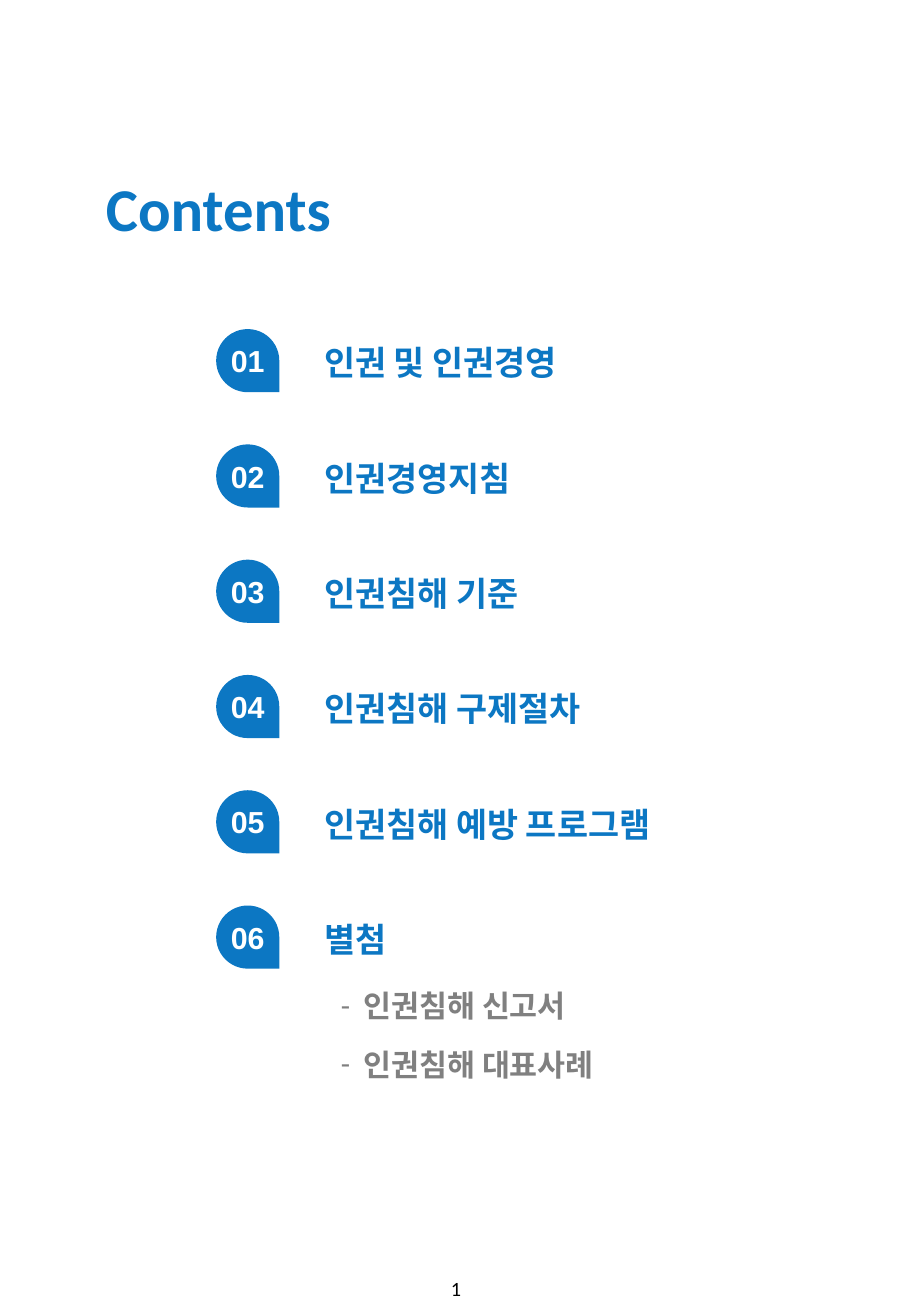
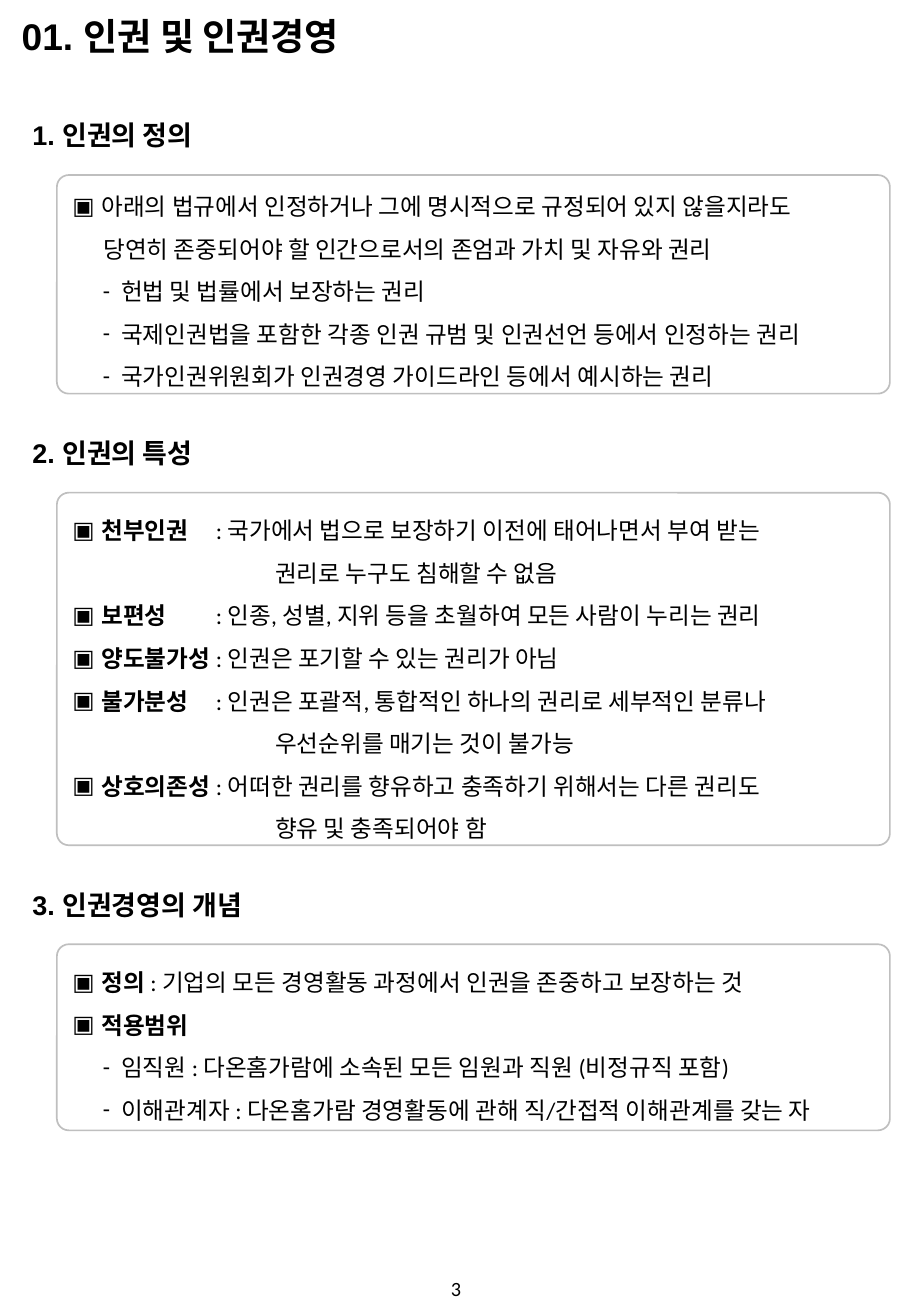
import pptx
import pptx.dml.color
import pptx.enum.shapes
import pptx.enum.text
import pptx.oxml.ns
import pptx.util
from lxml import etree

Cm = pptx.util.Cm
Pt = pptx.util.Pt
RGBColor = pptx.dml.color.RGBColor
ALIGN = pptx.enum.text.PP_ALIGN
ANCHOR = pptx.enum.text.MSO_ANCHOR
SHAPE = pptx.enum.shapes.MSO_SHAPE
qn = pptx.oxml.ns.qn

BLUE = RGBColor(0x0C, 0x77, 0xC3)
GRAY = RGBColor(0x80, 0x80, 0x80)
BORDER = RGBColor(0xBF, 0xBF, 0xBF)
BLACK = RGBColor(0, 0, 0)
WHITE = RGBColor(0xFF, 0xFF, 0xFF)

WIDTH, HEIGHT = 19.05, 27.51
COLON_TAB = 3.0
CORNER = 0.25

CHAPTERS = [
    "인권 및 인권경영",
    "인권경영지침",
    "인권침해 기준",
    "인권침해 구제절차",
    "인권침해 예방 프로그램",
    "별첨",
]
APPENDICES = ["인권침해 신고서", "인권침해 대표사례"]

LINE_STYLES = {
    "square": ("▣", 0.61, -0.61),
    "dash": ("-", 1.02, -0.38),
    "continued": (None, 0.65, 0),
    "explained": (None, 4.24, 0),
}

SECTIONS = [
    ("1. 인권의 정의", 4.57, ANCHOR.MIDDLE, [
        ("square", "", "아래의 법규에서 인정하거나 그에 명시적으로 규정되어 있지 않을지라도"),
        ("continued", "", "당연히 존중되어야 할 인간으로서의 존엄과 가치 및 자유와 권리"),
        ("dash", "", "헌법 및 법률에서 보장하는 권리"),
        ("dash", "", "국제인권법을 포함한 각종 인권 규범 및 인권선언 등에서 인정하는 권리"),
        ("dash", "", "국가인권위원회가 인권경영 가이드라인 등에서 예시하는 권리"),
    ]),
    ("2. 인권의 특성", 7.37, ANCHOR.TOP, [
        ("square", "천부인권\t", ": 국가에서 법으로 보장하기 이전에 태어나면서 부여 받는"),
        ("explained", "", "권리로 누구도 침해할 수 없음"),
        ("square", "보편성\t", ": 인종, 성별, 지위 등을 초월하여 모든 사람이 누리는 권리"),
        ("square", "양도불가성\t", ": 인권은 포기할 수 있는 권리가 아님"),
        ("square", "불가분성\t", ": 인권은 포괄적, 통합적인 하나의 권리로 세부적인 분류나"),
        ("explained", "", "우선순위를 매기는 것이 불가능"),
        ("square", "상호의존성\t", ": 어떠한 권리를 향유하고 충족하기 위해서는 다른 권리도"),
        ("explained", "", "향유 및 충족되어야 함"),
    ]),
    ("3. 인권경영의 개념", 3.89, ANCHOR.TOP, [
        ("square", "정의 ", ": 기업의 모든 경영활동 과정에서 인권을 존중하고 보장하는 것"),
        ("square", "적용범위", ""),
        ("dash", "", "임직원 : 다온홈가람에 소속된 모든 임원과 직원 (비정규직 포함)"),
        ("dash", "", "이해관계자 : 다온홈가람 경영활동에 관해 직/간접적 이해관계를 갖는 자"),
    ]),
]


def set_font(paragraph, name, size, color, bold=None):
    """Format the whole paragraph."""
    font = paragraph.font
    font.name, font.size, font.bold = name, Pt(size), bold
    font.color.rgb = color


def set_indent(paragraph, bullet, margin, indent, color, tab=None):
    """Give a paragraph its indents, bullet and tab stop."""
    properties = paragraph._p.get_or_add_pPr()
    properties.set("marL", str(Cm(margin)))
    properties.set("indent", str(Cm(indent)))
    if bullet:
        bullet_color = etree.SubElement(properties, qn("a:buClr"))
        etree.SubElement(bullet_color, qn("a:srgbClr"), val=str(color))
        etree.SubElement(properties, qn("a:buFont"), typeface="Calibri")
        etree.SubElement(properties, qn("a:buChar"), char=bullet)
    if tab:
        tabs = etree.SubElement(properties, qn("a:tabLst"))
        etree.SubElement(tabs, qn("a:tab"), pos=str(Cm(tab)), algn="l")


def add_label(slide, text, left, top, width, height, name, size, color,
              bold=True, align=ALIGN.LEFT, anchor=ANCHOR.TOP):
    """Add one line of text and return its paragraph."""
    frame = slide.shapes.add_textbox(Cm(left), Cm(top), Cm(width), Cm(height)).text_frame
    frame.word_wrap = True
    frame.vertical_anchor = anchor
    paragraph = frame.paragraphs[0]
    paragraph.text = text
    paragraph.alignment = align
    set_font(paragraph, name, size, color, bold)
    return paragraph


def add_page(presentation, title, left, top, height, name, size, color, number):
    """Add a slide with its title and page number."""
    slide = presentation.slides.add_slide(presentation.slide_layouts[5])
    placeholder = slide.shapes.title
    placeholder.left, placeholder.top = Cm(left), Cm(top)
    placeholder.width, placeholder.height = Cm(12), Cm(height)
    frame = placeholder.text_frame
    frame.text = title
    frame.auto_size = pptx.enum.text.MSO_AUTO_SIZE.NONE
    frame.vertical_anchor = ANCHOR.TOP
    frame.paragraphs[0].alignment = ALIGN.LEFT
    set_font(frame.paragraphs[0], name, size, color, True)
    add_label(slide, number, 7.39, 26.62, 4.29, 0.61, "Calibri", 12, BLACK,
              False, ALIGN.CENTER, ANCHOR.MIDDLE)
    return slide


def add_chapter(slide, number, text, top):
    """Add a numbered badge and its chapter name."""
    left, size = 4.52, 1.32
    badge = slide.shapes.add_shape(SHAPE.TEAR, Cm(left), Cm(top), Cm(size), Cm(size))
    badge.rotation = 90
    badge.shadow.inherit = False
    badge.fill.solid()
    badge.fill.fore_color.rgb = BLUE
    badge.line.fill.background()
    add_label(slide, f"{number:02}", left, top, size, size, "Arial", 18, WHITE,
              True, ALIGN.CENTER, ANCHOR.MIDDLE)
    add_label(slide, text, 6.53, top + 0.15, 9, 1.12, "Calibri", 20, BLUE)


def add_panel(slide, top, height, anchor, lines):
    """Add a rounded frame filled with indented lines."""
    panel = slide.shapes.add_shape(
        SHAPE.ROUNDED_RECTANGLE, Cm(1.19), Cm(top), Cm(17.42), Cm(height))
    panel.adjustments[0] = CORNER / height
    panel.shadow.inherit = False
    panel.fill.background()
    panel.line.color.rgb = BORDER
    panel.line.width = Pt(1)
    frame = panel.text_frame
    frame.word_wrap = True
    frame.vertical_anchor = anchor
    for index, (style, label, text) in enumerate(lines):
        paragraph = frame.add_paragraph() if index else frame.paragraphs[0]
        tab = COLON_TAB if "\t" in label else None
        set_indent(paragraph, *LINE_STYLES[style], BLACK, tab)
        paragraph.alignment = ALIGN.LEFT
        paragraph.line_spacing = 1.5
        set_font(paragraph, "Calibri", 14, BLACK)
        for part, bold in ((label, True), (text, False)):
            if part:
                run = paragraph.add_run()
                run.text = part
                run.font.bold = bold


def build_contents(presentation):
    """Build the table of contents."""
    slide = add_page(presentation, "Contents", 1.96, 3.45, 1.8, "Calibri", 36, BLUE, "1")
    for index, chapter in enumerate(CHAPTERS):
        add_chapter(slide, index + 1, chapter, 6.88 + 2.41 * index)
    for index, appendix in enumerate(APPENDICES):
        paragraph = add_label(slide, appendix, 6.88, 20.52 + 1.22 * index, 8, 1.02,
                              "Calibri", 18, GRAY)
        paragraph._p.remove(paragraph._p.pPr)
        set_indent(paragraph, "-", 0.47, -0.47, GRAY)
        set_font(paragraph, "Calibri", 18, GRAY, True)


def build_chapter(presentation):
    """Build the first chapter."""
    slide = add_page(presentation, "01. 인권 및 인권경영", 0.2, 0.15, 1.19,
                     "Arial", 22, BLACK, "3")
    top = 2.36
    for heading, height, anchor, lines in SECTIONS:
        add_label(slide, heading, 0.43, top, 8, 0.94, "Arial", 16, BLACK)
        add_panel(slide, top + 1.3, height, anchor, lines)
        top += 1.3 + height + 0.77


def main():
    """Build and save the presentation."""
    presentation = pptx.Presentation()
    presentation.slide_width = Cm(WIDTH)
    presentation.slide_height = Cm(HEIGHT)
    build_contents(presentation)
    build_chapter(presentation)
    presentation.save("out.pptx")


if __name__ == "__main__":
    main()
